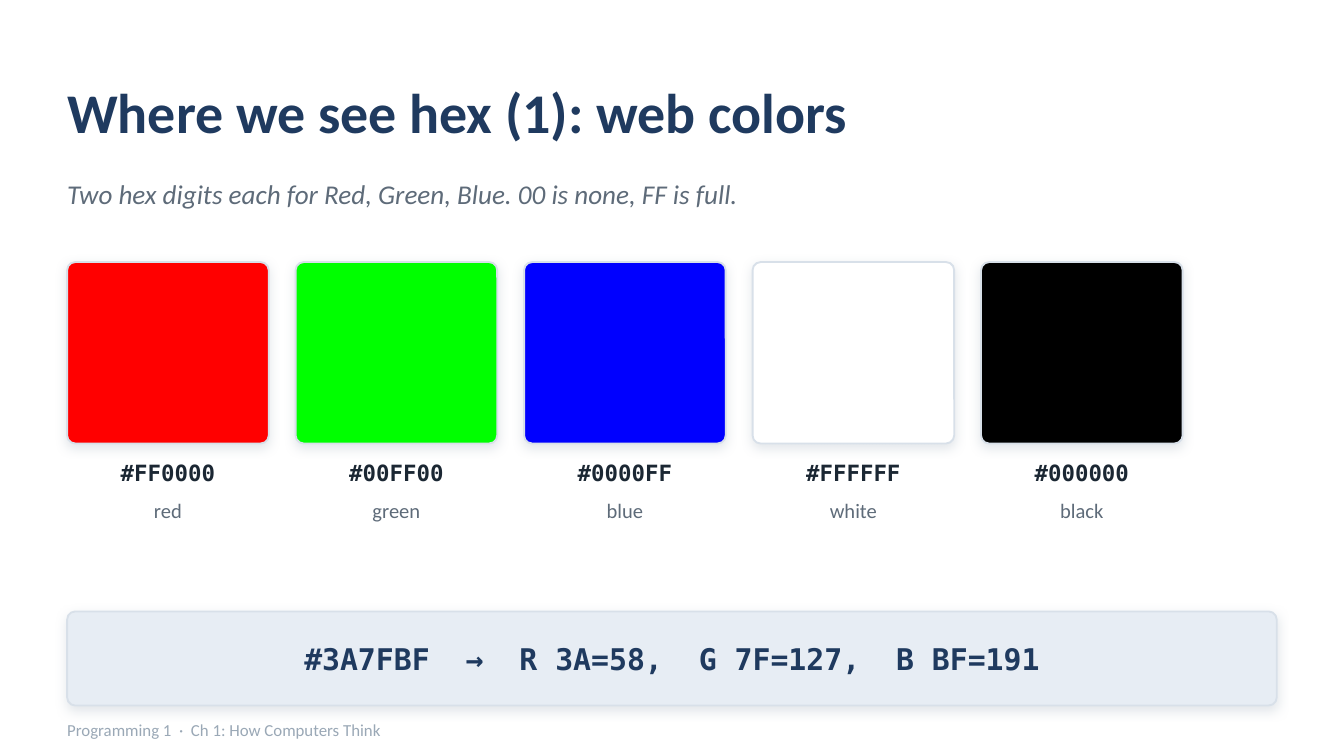
from dataclasses import dataclass

from lxml.etree import SubElement
from pptx import Presentation
from pptx.dml.color import RGBColor
from pptx.enum.shapes import MSO_SHAPE
from pptx.enum.text import MSO_ANCHOR, MSO_AUTO_SIZE, PP_ALIGN
from pptx.oxml.ns import qn
from pptx.shapes.autoshape import Shape
from pptx.slide import Slide
from pptx.util import Inches, Pt

COLORS = {
    "navy": "1F3A5F",
    "ink": "1B2733",
    "gray": "5E6B79",
    "muted": "9AA8B6",
    "border": "D8E0E9",
    "panel": "E7EDF4",
    "white": "FFFFFF",
}
SANS = "Calibri"
MONO = "DejaVu Sans Mono"
CORNER = 0.06
LEFT = 0.5
SWATCH_STEP = 1.7
SWATCH_W = 1.5


@dataclass
class Swatch:
    name: str
    hex: str


SWATCHES = [
    Swatch("red", "FF0000"),
    Swatch("green", "00FF00"),
    Swatch("blue", "0000FF"),
    Swatch("white", "FFFFFF"),
    Swatch("black", "000000"),
]


def set_text(sp: Shape, text: str, *, size: float, color: str, font: str = SANS,
             bold: bool = False, italic: bool = False,
             align: PP_ALIGN = PP_ALIGN.LEFT) -> None:
    tf = sp.text_frame
    tf.word_wrap = True
    tf.auto_size = MSO_AUTO_SIZE.NONE
    tf.vertical_anchor = MSO_ANCHOR.MIDDLE
    tf.margin_left = tf.margin_top = tf.margin_right = tf.margin_bottom = 0
    p = tf.paragraphs[0]
    p.alignment = align
    r = p.add_run()
    r.text = text
    r.font.name = font
    r.font.size = Pt(size)
    r.font.bold = bold
    r.font.italic = italic
    r.font.color.rgb = RGBColor.from_string(COLORS[color])


def add_text(s: Slide, x: float, y: float, w: float, h: float,
             text: str, **fmt) -> None:
    sp = s.shapes.add_textbox(Inches(x), Inches(y), Inches(w), Inches(h))
    set_text(sp, text, **fmt)


def add_card(s: Slide, x: float, y: float, w: float, h: float, fill: str) -> None:
    """Draw a bordered rounded rectangle with a soft shadow below it."""
    sp = s.shapes.add_shape(MSO_SHAPE.ROUNDED_RECTANGLE,
                            Inches(x), Inches(y), Inches(w), Inches(h))
    sp.adjustments[0] = CORNER / min(w, h)
    sp.fill.solid()
    sp.fill.fore_color.rgb = RGBColor.from_string(fill)
    sp.line.color.rgb = RGBColor.from_string(COLORS["border"])
    sp.line.width = Pt(1)
    sp.shadow.inherit = False
    effects = sp._element.spPr.find(qn("a:effectLst"))
    shadow = SubElement(effects, qn("a:outerShdw"), blurRad=str(Pt(6)),
                        dist=str(Pt(2)), dir="5400000", algn="bl",
                        rotWithShape="0")
    color = SubElement(shadow, qn("a:srgbClr"), val=COLORS["muted"])
    SubElement(color, qn("a:alpha"), val="28000")


def add_swatch(s: Slide, x: float, swatch: Swatch) -> None:
    add_card(s, x, 1.95, SWATCH_W, 1.35, swatch.hex)
    label_x = x - (SWATCH_STEP - SWATCH_W) / 2
    add_text(s, label_x, 3.37, SWATCH_STEP, 0.3, f"#{swatch.hex}", size=12,
             color="ink", font=MONO, bold=True, align=PP_ALIGN.CENTER)
    add_text(s, label_x, 3.66, SWATCH_STEP, 0.28, swatch.name, size=11,
             color="gray", align=PP_ALIGN.CENTER)


def main() -> None:
    prs = Presentation()
    prs.slide_width = Inches(10)
    prs.slide_height = Inches(10 * 9 / 16)
    s = prs.slides.add_slide(prs.slide_layouts[5])
    s.background.fill.solid()
    s.background.fill.fore_color.rgb = RGBColor.from_string(COLORS["white"])

    title = s.shapes.title
    title.left, title.top = Inches(LEFT), Inches(0.4)
    title.width, title.height = Inches(9), Inches(0.85)
    set_text(title, "Where we see hex (1): web colors", size=30,
             color="navy", bold=True)
    add_text(s, LEFT, 1.24, 9, 0.4,
             "Two hex digits each for Red, Green, Blue. 00 is none, FF is full.",
             size=14.5, color="gray", italic=True)

    for i, swatch in enumerate(SWATCHES):
        add_swatch(s, LEFT + i * SWATCH_STEP, swatch)

    add_card(s, LEFT, 4.55, 9, 0.7, COLORS["panel"])
    add_text(s, 0.7, 4.58, 8.6, 0.64,
             "#3A7FBF  →  R 3A=58,  G 7F=127,  B BF=191", size=16,
             color="navy", font=MONO, bold=True, align=PP_ALIGN.CENTER)
    add_text(s, LEFT, 5.3, 8, 0.26,
             "Programming 1  ·  Ch 1: How Computers Think", size=9, color="muted")

    prs.save("out.pptx")


if __name__ == "__main__":
    main()
